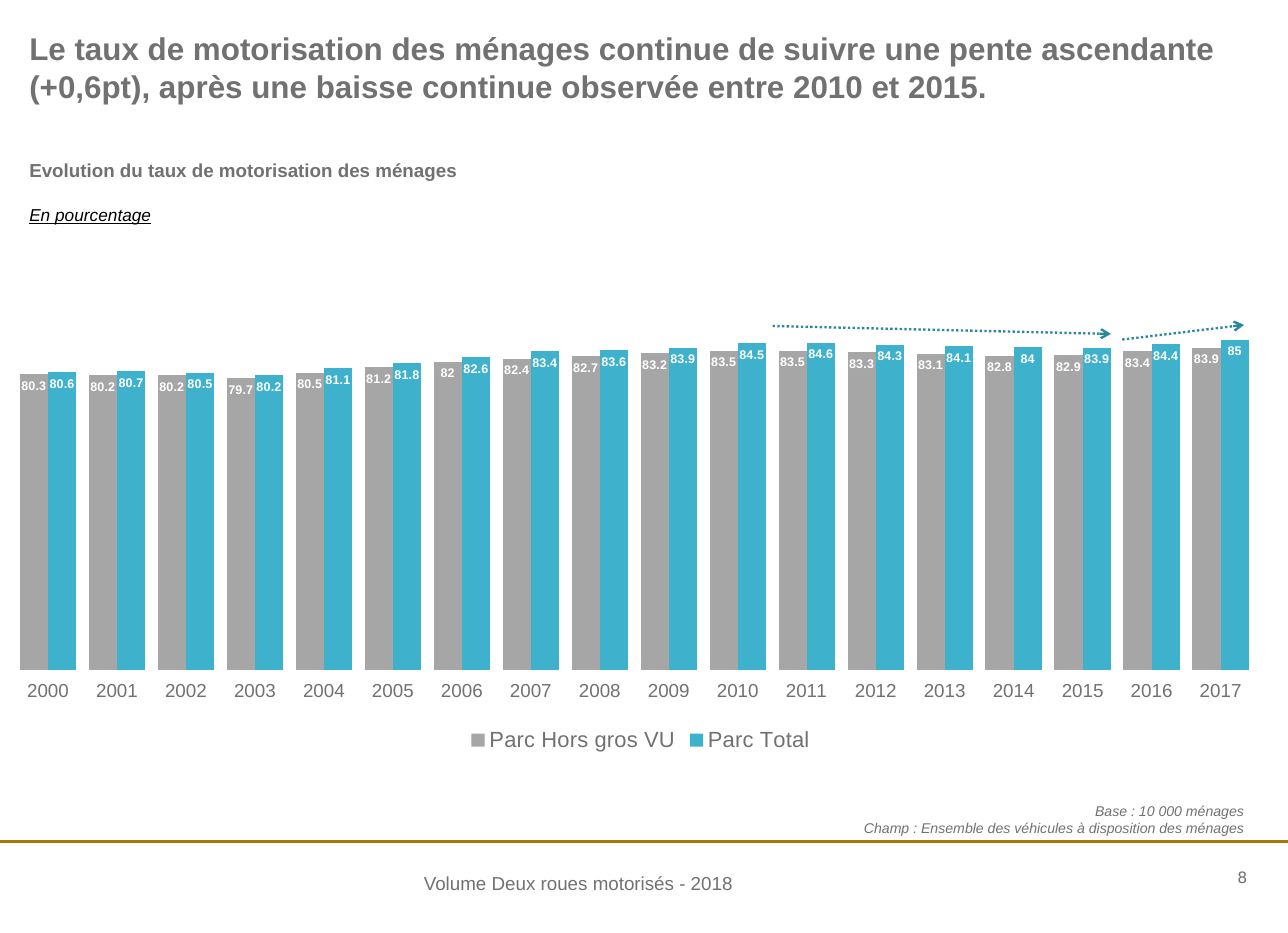
from pptx import Presentation
from pptx import util as u
from pptx.chart import data as chart_data
from pptx.dml import color
from pptx.enum import chart as charts, dml, shapes, text
from pptx.oxml import parse_xml
from pptx.oxml.ns import nsdecls, qn

GREY, BLACK, WHITE = "717171", "000000", "FFFFFF"
TEAL, GOLD = "2A889E", "A67A0A"
LEFT, RIGHT = text.PP_ALIGN.LEFT, text.PP_ALIGN.RIGHT
TOP, MIDDLE = text.MSO_ANCHOR.TOP, text.MSO_ANCHOR.MIDDLE

TEXTS = [
    dict(lines=["Le taux de motorisation des ménages continue de suivre une pente "
                "ascendante (+0,6pt), après une baisse continue observée entre 2010 et 2015."],
         at=(0.26, 0, 10.97, 0.93), insets=(0, 0.26, 0, 0), size=20, bold=True),
    dict(lines=["Evolution du taux de motorisation des ménages"],
         at=(0.26, 1.18, 10.71, 0.46), insets=(0, 0.26, 0, 0), size=12, bold=True),
    dict(lines=["En pourcentage"], at=(0.26, 1.81, 2.03, 0.19), size=11,
         italic=True, underline=True, ink=BLACK),
    dict(lines=["Base : 10 000 ménages",
                "Champ : Ensemble des véhicules à disposition des ménages"],
         at=(6.38, 7.07, 4.74, 0.39), insets=(0.09, 0.04, 0.09, 0.04), size=9,
         italic=True, align=RIGHT),
    dict(lines=["Volume Deux roues motorisés - 2018"], at=(3.66, 7.68, 2.96, 0.3),
         insets=(0.1, 0.05, 0.1, 0.05), size=12, wrap=False),
    dict(lines=["8"], at=(10.43, 7.63, 0.63, 0.3), size=10, font="DejaVu Sans",
         align=RIGHT, anchor=MIDDLE),
]
YEARS = [str(year) for year in range(2000, 2018)]
FLEETS = [
    ("Parc Hors gros VU", "A6A6A6",
     [80.3, 80.2, 80.2, 79.7, 80.5, 81.2, 82, 82.4, 82.7,
      83.2, 83.5, 83.5, 83.3, 83.1, 82.8, 82.9, 83.4, 83.9]),
    ("Parc Total", "3EB1CC",
     [80.6, 80.7, 80.5, 80.2, 81.1, 81.8, 82.6, 83.4, 83.6,
      83.9, 84.5, 84.6, 84.3, 84.1, 84, 83.9, 84.4, 85]),
]
CHART_AT = (0.12, 1.89, 11.12, 4.82)
PLOT = dict(x=0, y=0.03, w=0.99, h=0.81)
TRENDS = [(6.85, 2.89, 9.85, 2.96), (9.95, 3.01, 11.03, 2.88)]
FOOTER_RULE = (0, 7.46, 11.42, 7.46)


def rgb(value):
    return color.RGBColor.from_string(value)


def inches(values):
    return [u.Inches(value) for value in values]


def style(font, size, ink=GREY, name="Arial", bold=False):
    font.size, font.name, font.bold = u.Pt(size), name, bold
    font.color.rgb = rgb(ink)


def add_text(slide, lines, at, size, insets=(0, 0, 0, 0), font="Arial", ink=GREY,
             bold=False, italic=False, underline=False, align=LEFT, anchor=TOP, wrap=True):
    frame = slide.shapes.add_textbox(*inches(at)).text_frame
    frame.word_wrap, frame.vertical_anchor = wrap, anchor
    (frame.margin_left, frame.margin_top,
     frame.margin_right, frame.margin_bottom) = inches(insets)
    for index, line in enumerate(lines):
        paragraph = frame.add_paragraph() if index else frame.paragraphs[0]
        paragraph.alignment = align
        run = paragraph.add_run()
        run.text = line
        style(run.font, size, ink, font, bold)
        run.font.italic, run.font.underline = italic, underline


def add_line(slide, ends, ink, arrow=False):
    line = slide.shapes.add_connector(shapes.MSO_CONNECTOR.STRAIGHT, *inches(ends))
    line.line.color.rgb, line.line.width = rgb(ink), u.Pt(1.5)
    if arrow:
        line.line.dash_style = dml.MSO_LINE.ROUND_DOT
        line.line._get_or_add_ln().append(
            parse_xml(f'<a:tailEnd {nsdecls("a")} type="arrow"/>'))
    line._element.spPr.append(parse_xml(f'<a:effectLst {nsdecls("a")}/>'))


def place_plot(chart):
    plot_area = chart._chartSpace.chart.plotArea
    for layout in plot_area.findall(qn("c:layout")):
        plot_area.remove(layout)
    modes = '<c:xMode val="edge"/><c:yMode val="edge"/>'
    sizes = "".join(f'<c:{key} val="{value}"/>' for key, value in PLOT.items())
    plot_area.insert(0, parse_xml(
        f'<c:layout {nsdecls("c")}><c:manualLayout><c:layoutTarget val="inner"/>'
        f'{modes}{sizes}</c:manualLayout></c:layout>'))


def add_rates(slide):
    rates = chart_data.CategoryChartData()
    rates.categories = YEARS
    for name, _, values in FLEETS:
        rates.add_series(name, values)
    chart = slide.shapes.add_chart(
        charts.XL_CHART_TYPE.COLUMN_CLUSTERED, *inches(CHART_AT), rates).chart
    style(chart.font, 18, name="DejaVu Sans")
    chart.has_title = False
    chart.has_legend = True
    chart.legend.position = charts.XL_LEGEND_POSITION.BOTTOM
    chart.legend.include_in_layout = False
    style(chart.legend.font, 14)
    years, percent = chart.category_axis, chart.value_axis
    style(years.tick_labels.font, 12)
    years.format.line.fill.background()
    percent.minimum_scale, percent.maximum_scale = 40, 100
    percent.has_major_gridlines = percent.visible = False
    bars = chart.plots[0]
    bars.gap_width, bars.overlap, bars.vary_by_categories = 45, 0, False
    for series, (_, ink, _) in zip(bars.series, FLEETS):
        series.format.fill.solid()
        series.format.fill.fore_color.rgb = rgb(ink)
        labels = series.data_labels
        labels.show_value = True
        labels.position = charts.XL_LABEL_POSITION.INSIDE_END
        style(labels.font, 8, WHITE, bold=True)
    place_plot(chart)


def main():
    """Build the household motorisation slide."""
    deck = Presentation()
    deck.slide_width, deck.slide_height = inches((11.42, 8.27))
    slide = deck.slides.add_slide(deck.slide_layouts[6])
    add_line(slide, FOOTER_RULE, GOLD)
    for item in TEXTS:
        add_text(slide, **item)
    add_rates(slide)
    for ends in TRENDS:
        add_line(slide, ends, TEAL, arrow=True)
    deck.save("out.pptx")


if __name__ == "__main__":
    main()
